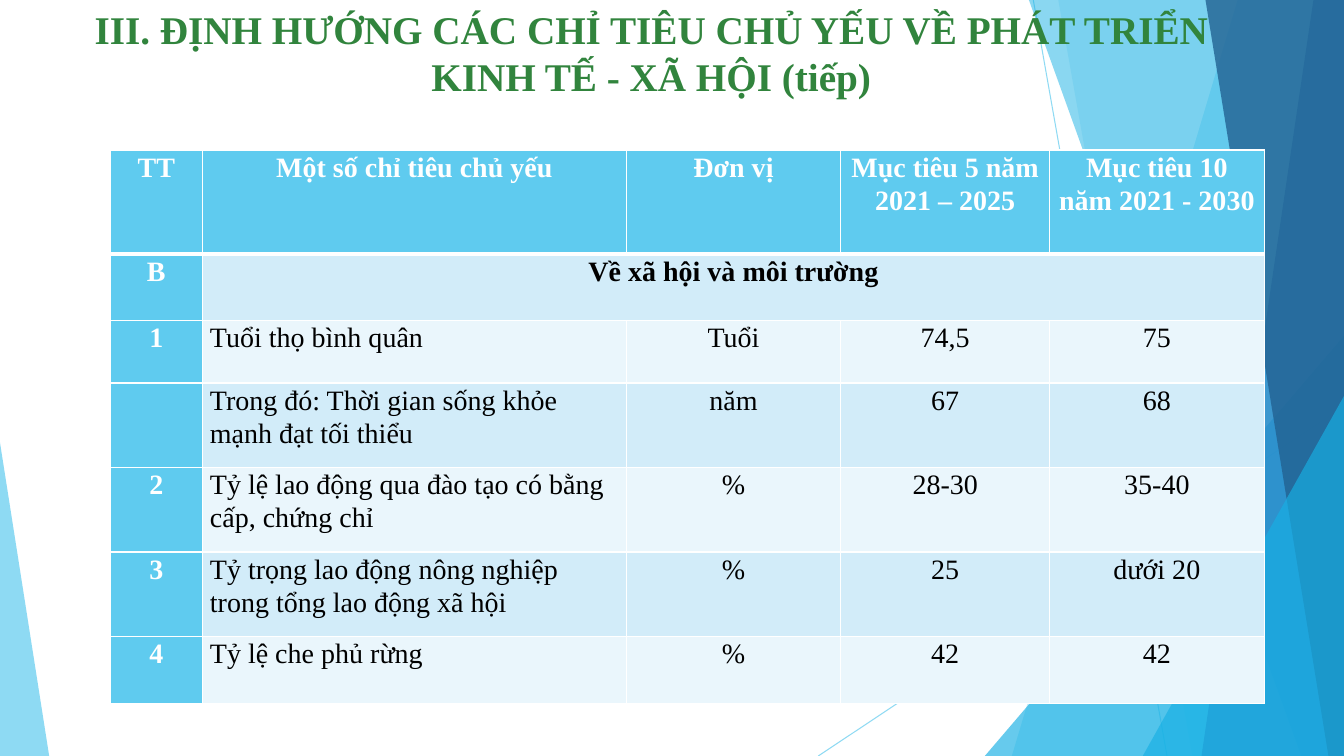
from lxml import etree
from pptx import Presentation
from pptx.dml.color import RGBColor
from pptx.enum.shapes import MSO_CONNECTOR, MSO_SHAPE
from pptx.enum.text import MSO_ANCHOR, PP_ALIGN
from pptx.oxml.ns import qn
from pptx.util import Cm, Pt

STRAIGHT = MSO_CONNECTOR.STRAIGHT
TRIANGLE = MSO_SHAPE.ISOSCELES_TRIANGLE
LEFT, CENTER = PP_ALIGN.LEFT, PP_ALIGN.CENTER
BOTTOM = MSO_ANCHOR.BOTTOM

FONT = "Times New Roman"
WIDTH, HEIGHT = 33.87, 19.05
SKY, CYAN, BLUE, NAVY = "5FCBEF", "17B0E4", "2E83C3", "226292"
WHITE, BLACK, GREEN = "FFFFFF", "000000", "31843D"
ROW_FILLS = ["EAF6FC", "D2ECF9"]

# Top x, bottom x, colour, opacity of each band that runs to the right edge
BANDS_BEHIND = [(31.19, 25.5, SKY, 36), (26.67, 30.05, SKY, 20)]
BANDS_FRONT = [(25.93, 32.79, CYAN, 50), (33.1, 30.28, BLUE, 70),
               (30.38, 33.48, NAVY, 80)]

COLUMNS = [2.34, 10.67, 5.41, 5.26, 5.41]
ROWS = [2.62, 1.68, 1.57, 2.13, 2.13, 2.13, 1.68]
INDICATORS = [
    ["TT", "Một số chỉ tiêu chủ yếu", "Đơn vị",
     "Mục tiêu 5 năm 2021 – 2025", "Mục tiêu 10 năm 2021 - 2030"],
    ["B", "Về xã hội và môi trường", "", "", ""],
    ["1", "Tuổi thọ bình quân", "Tuổi", "74,5", "75"],
    ["", "Trong đó: Thời gian sống khỏe mạnh đạt tối thiểu", "năm", "67", "68"],
    ["2", "Tỷ lệ lao động qua đào tạo có bằng cấp, chứng chỉ", "%", "28-30", "35-40"],
    ["3", "Tỷ trọng lao động nông nghiệp trong tổng lao động xã hội", "%", "25", "dưới 20"],
    ["4", "Tỷ lệ che phủ rừng", "%", "42", "42"],
]
SECTION_ROW = 1


def rgb(value):
    return RGBColor.from_string(value)


def set_alpha(fill_element, percent):
    color = fill_element.find(".//" + qn("a:srgbClr"))
    etree.SubElement(color, qn("a:alpha")).set("val", str(percent * 1000))


def paint(sp, color, opacity):
    sp.shadow.inherit = False
    sp.fill.solid()
    sp.fill.fore_color.rgb = rgb(color)
    sp.line.fill.background()
    set_alpha(sp._element.spPr.find(qn("a:solidFill")), opacity)


def write(tf, text, size=20, color=BLACK, bold=False, align=CENTER,
          spacing=None, gap=None):
    p = tf.paragraphs[0]
    p.alignment = align
    if spacing:
        p.line_spacing = spacing
    if gap:
        p.space_before = p.space_after = Pt(gap)
    r = p.add_run()
    r.text = text
    r.font.name, r.font.size, r.font.bold = FONT, Pt(size), bold
    r.font.color.rgb = rgb(color)


def add_line(s, x1, y1, x2, y2):
    line = s.shapes.add_connector(STRAIGHT, Cm(x1), Cm(y1), Cm(x2), Cm(y2))
    line.line.width = Pt(0.75)
    line.line.color.rgb = rgb(SKY)
    spPr = line._element.spPr
    set_alpha(spPr.find(qn("a:ln")), 70)
    etree.SubElement(spPr, qn("a:effectLst"))


def add_band(s, right, height, top_x, bottom_x, color, opacity):
    builder = s.shapes.build_freeform(Cm(top_x), 0)
    builder.add_line_segments([(Cm(right), 0), (Cm(right), Cm(height)),
                               (Cm(bottom_x), Cm(height))], close=True)
    paint(builder.convert_to_shape(), color, opacity)


def add_corner(s, x, bottom, width, height, peak, color, opacity):
    sp = s.shapes.add_shape(TRIANGLE, Cm(x), Cm(bottom - height),
                            Cm(width), Cm(height))
    sp.adjustments[0] = peak
    paint(sp, color, opacity)


def add_backdrop(s, width, height):
    add_line(s, 26.04, 0, 29.41, height)
    add_line(s, width, 10.24, 20.62, height)
    for band in BANDS_BEHIND:
        add_band(s, width, height, *band)
    add_corner(s, width - 9.05, height, 9.05, 10.59, 1, CYAN, 66)
    for band in BANDS_FRONT:
        add_band(s, width, height, *band)
    add_corner(s, width - 5.07, height, 5.07, 9.07, 1, CYAN, 66)
    add_corner(s, 0, height, 1.24, 7.9, 0, SKY, 70)


def add_title(s, x, y, width, height):
    tf = s.shapes.add_textbox(Cm(x), Cm(y), Cm(width), Cm(height)).text_frame
    tf.word_wrap = True
    tf.vertical_anchor = BOTTOM
    write(tf, "III. ĐỊNH HƯỚNG CÁC CHỈ TIÊU CHỦ YẾU VỀ PHÁT TRIỂN "
              "KINH TẾ - XÃ HỘI (tiếp)", size=28, color=GREEN, bold=True, gap=6)


def set_borders(cell, top, bottom):
    tcPr = cell._tc.get_or_add_tcPr()
    for side, width in (("L", 1), ("R", 1), ("T", top), ("B", bottom)):
        ln = etree.SubElement(tcPr, qn("a:ln" + side), w=str(Pt(width)))
        fill = etree.SubElement(ln, qn("a:solidFill"))
        etree.SubElement(fill, qn("a:srgbClr"), val=WHITE)


def format_cell(cell, text, row, col):
    heading = row == 0 or col == 0
    set_borders(cell, top=3 if row == 1 else 1, bottom=3 if row == 0 else 1)
    cell.fill.solid()
    cell.fill.fore_color.rgb = rgb(SKY if heading else ROW_FILLS[row % 2])
    cell.margin_left = cell.margin_right = Cm(0.18)
    cell.margin_top = cell.margin_bottom = 0
    if text:
        write(cell.text_frame, text, color=WHITE if heading else BLACK,
              bold=heading or row == SECTION_ROW,
              align=LEFT if col == 1 and row > SECTION_ROW else CENTER,
              spacing=1.07)


def add_indicator_table(s, x, y):
    table = s.shapes.add_table(len(ROWS), len(COLUMNS), Cm(x), Cm(y),
                               Cm(sum(COLUMNS)), Cm(sum(ROWS))).table
    for column, width in zip(table.columns, COLUMNS):
        column.width = Cm(width)
    for i, (height, texts) in enumerate(zip(ROWS, INDICATORS)):
        table.rows[i].height = Cm(height)
        for j, text in enumerate(texts):
            format_cell(table.cell(i, j), text, i, j)
    table.cell(SECTION_ROW, 1).merge(table.cell(SECTION_ROW, len(COLUMNS) - 1))


def main():
    prs = Presentation()
    prs.slide_width, prs.slide_height = Cm(WIDTH), Cm(HEIGHT)
    s = prs.slides.add_slide(prs.slide_layouts[6])
    add_backdrop(s, WIDTH, HEIGHT)
    add_title(s, 0.99, -1.04, 30.84, 3.68)
    add_indicator_table(s, 2.77, 3.78)
    prs.save("out.pptx")


if __name__ == "__main__":
    main()
